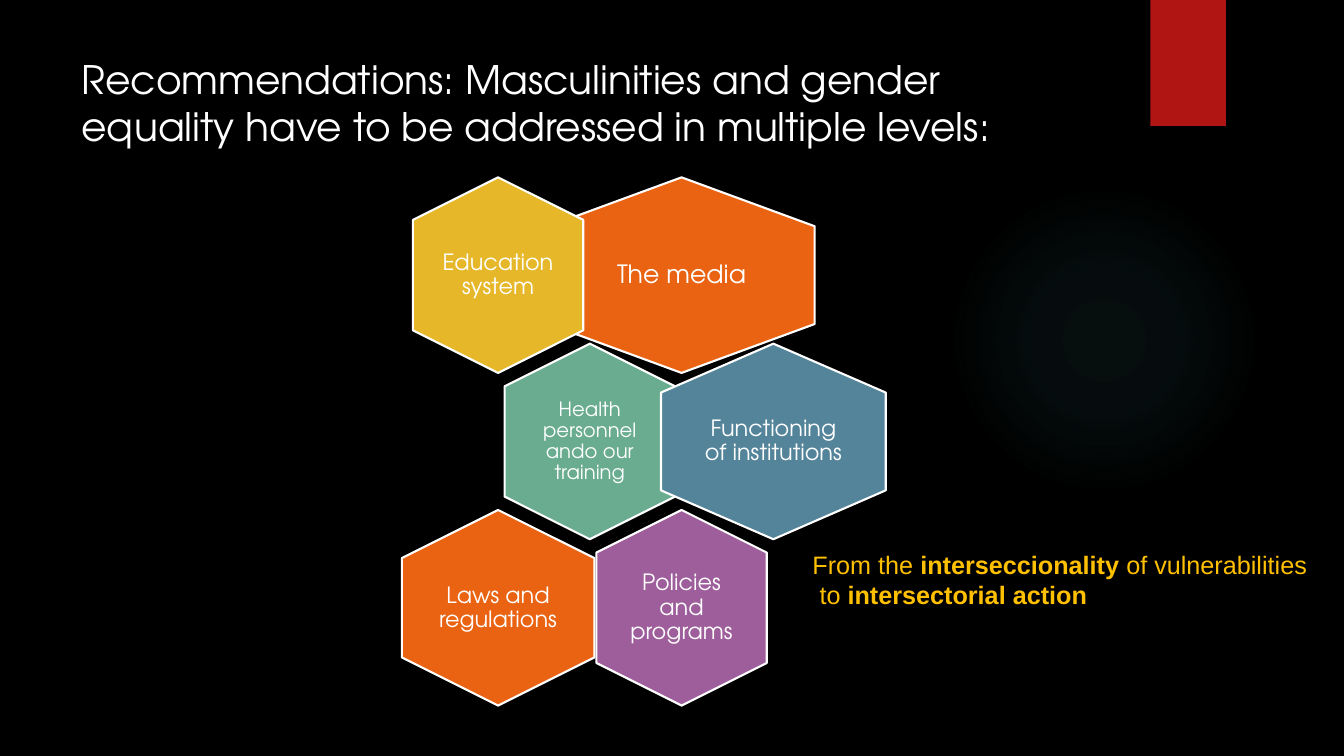
from dataclasses import dataclass
from lxml.etree import SubElement
from pptx import Presentation
from pptx.dml.color import RGBColor
from pptx.enum.shapes import MSO_SHAPE as Shape
from pptx.enum.text import MSO_ANCHOR as Anchor, PP_ALIGN as Align
from pptx.oxml.ns import qn
from pptx.util import Inches, Pt


@dataclass(frozen=True)
class Theme:
    background: str = "000000"
    text: str = "FFFFFF"
    accent: str = "B01513"
    glow: str = "50B9C1"
    message: str = "FFC000"
    orange: str = "EA6312"
    yellow: str = "E6B729"
    green: str = "6AAC90"
    blue: str = "54849A"
    purple: str = "9E5E9B"
    heading_font: str = "TeX Gyre Adventor"
    message_font: str = "Arial"
    title_size: int = 28
    large: int = 18
    medium: int = 16
    small: int = 14
    outline: float = 1.5


THEME = Theme()
WIDTH, HEIGHT = 13.33, 7.5

# Honeycomb grid: neighbours in a row are two columns apart.
GRID_LEFT, GRID_TOP = 4.94, 2.73
COLUMN, ROW = 0.91, 1.65
CELL_HEIGHT = 1.94

# column, row, cell width, label width, inset, fill, type size, label
CELLS = [
    (2, 0, 2.64, 1.76, 0.07, THEME.orange, THEME.large, "The media"),
    (0, 0, 1.69, 1.16, 0, THEME.yellow, THEME.medium, "Education system"),
    (1, 1, 1.69, 1.16, 0.06, THEME.green, THEME.small,
     "Health personnel ando our training"),
    (3, 1, 2.23, 1.49, 0, THEME.blue, THEME.medium, "Functioning of institutions"),
    (2, 2, 1.69, 1.16, 0.07, THEME.purple, THEME.medium, "Policies and programs"),
    (0, 2, 1.91, 1.28, 0, THEME.orange, THEME.medium, "Laws and regulations"),
]
LABEL_HEIGHT = 1.32

MESSAGE = [
    [("From the ", False), ("interseccionality ", True), ("of vulnerabilities", False)],
    [("to ", False), ("intersectorial action", True)],
]


def color(code):
    return RGBColor.from_string(code)


def add_plain_shape(page, kind, left, top, width, height):
    shape = page.shapes.add_shape(
        kind, Inches(left), Inches(top), Inches(width), Inches(height))
    shape.shadow.inherit = False
    shape.line.fill.background()
    return shape


def add_text(page, lines, left, top, width, height, *, font, size, fill,
             align=Align.LEFT, anchor=Anchor.TOP, insets=(0.1, 0.05),
             spacing=None, wrap=True):
    """Add a text box; each line is a list of (text, bold) pairs."""
    box = page.shapes.add_textbox(
        Inches(left), Inches(top), Inches(width), Inches(height))
    frame = box.text_frame
    frame.word_wrap = wrap
    frame.vertical_anchor = anchor
    frame.margin_left = frame.margin_right = Inches(insets[0])
    frame.margin_top = frame.margin_bottom = Inches(insets[1])
    for number, line in enumerate(lines):
        para = frame.add_paragraph() if number else frame.paragraphs[0]
        para.alignment = align
        para.line_spacing = spacing
        for text, bold in line:
            span = para.add_run()
            span.text = text
            span.font.name = font
            span.font.size = Pt(size)
            span.font.bold = bold
            span.font.color.rgb = color(fill)
    return box


def add_glow(page):
    """Add a faint circle that fades out from its centre."""
    glow = add_plain_shape(page, Shape.OVAL, 9.41, 1.83, 3.08, 3.08)
    glow.fill.background()
    properties = glow.fill._xPr
    empty_fill = properties.find(qn("a:noFill"))
    gradient = SubElement(properties, qn("a:gradFill"), rotWithShape="1")
    properties.replace(empty_fill, gradient)
    stops = SubElement(gradient, qn("a:gsLst"))
    for position, opacity in ((0, 7), (36, 6), (69, 0)):
        stop = SubElement(stops, qn("a:gs"), pos=str(position * 1000))
        tint = SubElement(stop, qn("a:srgbClr"), val=THEME.glow)
        SubElement(tint, qn("a:alpha"), val=str(opacity * 1000))
    circle = SubElement(gradient, qn("a:path"), path="circle")
    SubElement(circle, qn("a:fillToRect"),
               {side: "50000" for side in ("l", "t", "r", "b")})


def add_ribbon(page):
    ribbon = add_plain_shape(page, Shape.RECTANGLE, 11.41, 0, 0.75, HEIGHT / 6)
    ribbon.fill.solid()
    ribbon.fill.fore_color.rgb = color(THEME.accent)


def add_cell(page, column, row, width, label_width, inset, fill, size, label):
    """Add an upright hexagon, centred on its grid point, and its label."""
    center_x = GRID_LEFT + column * COLUMN
    center_y = GRID_TOP + row * ROW
    # The quarter turn swaps the sides of the hexagon.
    hexagon = add_plain_shape(
        page, Shape.HEXAGON, center_x - CELL_HEIGHT / 2, center_y - width / 2,
        CELL_HEIGHT, width)
    hexagon.rotation = 90
    hexagon.fill.solid()
    hexagon.fill.fore_color.rgb = color(fill)
    hexagon.line.color.rgb = color(THEME.text)
    hexagon.line.width = Pt(THEME.outline)
    add_text(page, [[(label, False)]], center_x - label_width / 2,
             center_y - LABEL_HEIGHT / 2, label_width, LABEL_HEIGHT,
             font=THEME.heading_font, size=size, fill=THEME.text,
             align=Align.CENTER, anchor=Anchor.MIDDLE,
             insets=(inset, inset), spacing=0.9)


def add_message(page):
    box = add_text(page, MESSAGE, 7.96, 5.4, 5.22, 0.71,
                   font=THEME.message_font, size=THEME.large,
                   fill=THEME.message, wrap=False)
    second_line = box.text_frame.paragraphs[1]
    second_line._p.get_or_add_pPr().set("marL", str(Inches(0.07)))


def main():
    deck = Presentation()
    deck.slide_width, deck.slide_height = Inches(WIDTH), Inches(HEIGHT)
    page = deck.slides.add_slide(deck.slide_layouts[6])
    page.background.fill.solid()
    page.background.fill.fore_color.rgb = color(THEME.background)

    add_glow(page)
    add_ribbon(page)
    title = "Recommendations: Masculinities and gender equality have to be addressed in multiple levels:"
    add_text(page, [[(title, False)]], 0.71, 0.5, 10.29, 1.53,
             font=THEME.heading_font, size=THEME.title_size, fill=THEME.text)
    for cell in CELLS:
        add_cell(page, *cell)
    add_message(page)
    deck.save("out.pptx")


if __name__ == "__main__":
    main()
